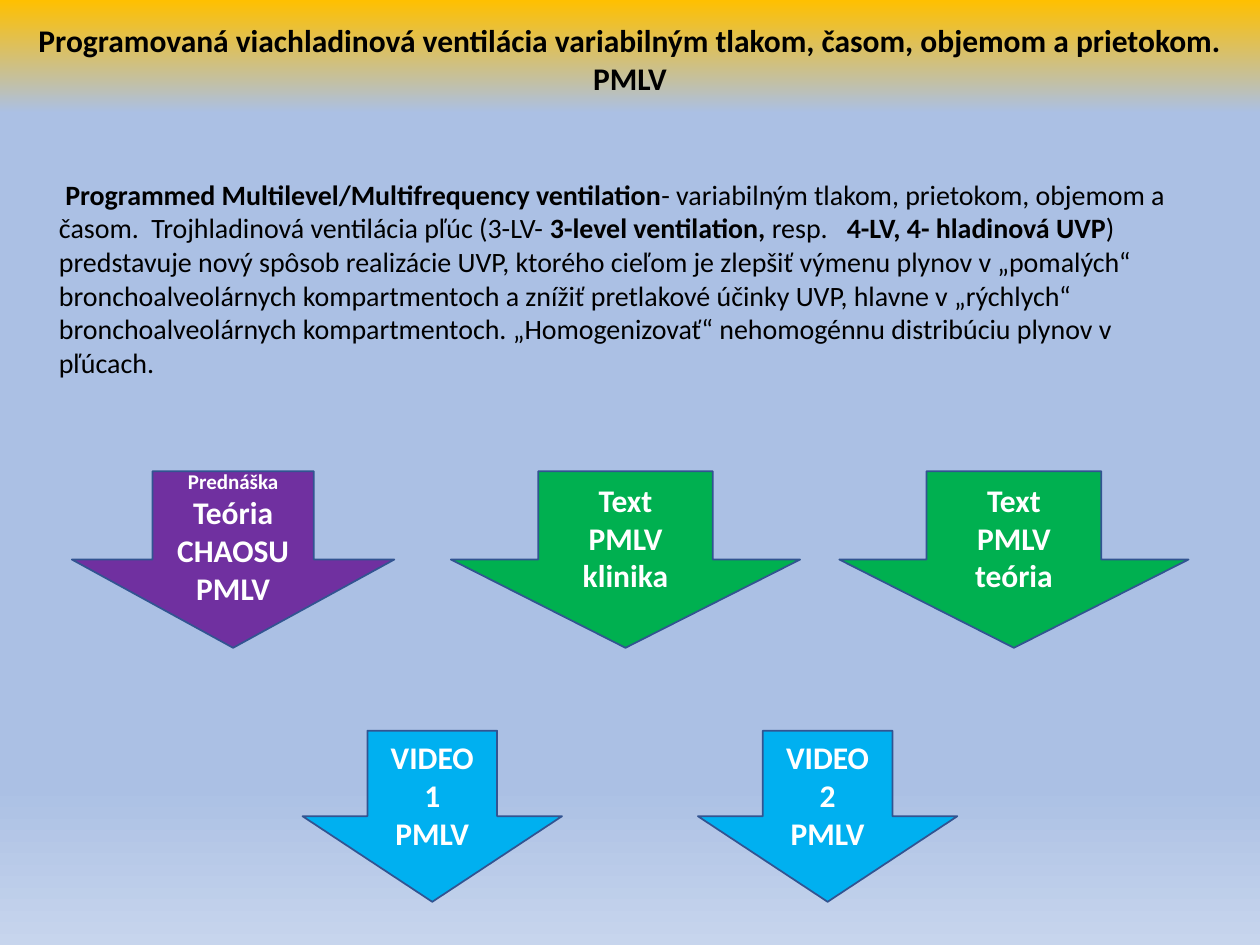
import copy
from dataclasses import dataclass

import pptx
import pptx.dml.color
import pptx.enum.shapes
import pptx.enum.text
import pptx.oxml.ns
import pptx.util
from pptx.util import Cm

COLORS = {
    "gold": "FFC000",
    "sky": "ABC0E4",
    "pale": "C7D5ED",
    "black": "000000",
    "white": "FFFFFF",
    "outline": "325491",
    "purple": "7030A0",
    "green": "00B050",
    "blue": "00B0F0",
}
BACKGROUND_STOPS = [(0, "gold"), (0.12, "sky"), (0.83, "sky"), (1, "pale")]
FONT = "Calibri"


@dataclass
class ArrowRow:
    top: float
    height: float


@dataclass
class Arrow:
    row: ArrowRow
    left: float
    width: float
    color: str
    lines: list[str]
    first_size: int = 18


LECTURES = ArrowRow(9.5, 3.56)
VIDEOS = ArrowRow(14.73, 3.45)
ARROWS = [
    Arrow(LECTURES, 1.45, 6.5, "purple", ["Prednáška", "Teória", "CHAOSU", "PMLV"], 12),
    Arrow(LECTURES, 9.09, 7.04, "green", ["Text", "PMLV klinika"]),
    Arrow(LECTURES, 16.92, 7.04, "green", ["Text", "PMLV teória"]),
    Arrow(VIDEOS, 6.1, 5.23, "blue", ["VIDEO 1", "PMLV"]),
    Arrow(VIDEOS, 14.07, 5.23, "blue", ["VIDEO 2", "PMLV"]),
]
TITLE_LINES = [
    "Programovaná viachladinová ventilácia variabilným tlakom, časom, objemom a prietokom.",
    "PMLV",
]
BODY_RUNS = [
    (" ", False),
    ("Programmed Multilevel/Multifrequency ventilation", True),
    ("- variabilným tlakom, prietokom, objemom a časom.  Trojhladinová ventilácia pľúc (3-LV- ", False),
    ("3-level ventilation, ", True),
    ("resp.   ", False),
    ("4-LV, 4- hladinová UVP", True),
    (") predstavuje nový spôsob realizácie UVP, ktorého cieľom je zlepšiť výmenu plynov "
     "v „pomalých“ bronchoalveolárnych kompartmentoch a znížiť pretlakové účinky UVP, "
     "hlavne v „rýchlych“ bronchoalveolárnych kompartmentoch. „Homogenizovať“ nehomogénnu "
     "distribúciu plynov v pľúcach.", False),
]


def rgb(name: str) -> pptx.dml.color.RGBColor:
    return pptx.dml.color.RGBColor.from_string(COLORS[name])


def format_font(font, size: int, color: str) -> None:
    font.name = FONT
    font.size = pptx.util.Pt(size)
    font.color.rgb = rgb(color)


def write_centered(text_frame, lines: list[str], color: str, first_size: int = 18) -> None:
    text_frame.text = "\n".join(lines)
    text_frame.vertical_anchor = pptx.enum.text.MSO_ANCHOR.MIDDLE
    for index, paragraph in enumerate(text_frame.paragraphs):
        paragraph.alignment = pptx.enum.text.PP_ALIGN.CENTER
        paragraph.space_before = pptx.util.Pt(0)
        format_font(paragraph.font, 18 if index else first_size, color)
        paragraph.font.bold = True


def paint_background(slide) -> None:
    fill = slide.background.fill
    fill.gradient()
    fill.gradient_angle = 270
    stop_list = slide.element.find(".//" + pptx.oxml.ns.qn("a:gsLst"))
    while len(stop_list) < len(BACKGROUND_STOPS):
        stop_list.append(copy.deepcopy(stop_list[0]))
    for stop, (position, color) in zip(fill.gradient_stops, BACKGROUND_STOPS):
        stop.position = position
        stop.color.rgb = rgb(color)


def add_title(slide) -> None:
    title = slide.shapes.title
    title.left, title.top, title.width, title.height = Cm(0.43), Cm(0.28), Cm(24.54), Cm(1.8)
    write_centered(title.text_frame, TITLE_LINES, "black")
    title.text_frame.word_wrap = False
    title.text_frame.auto_size = pptx.enum.text.MSO_AUTO_SIZE.NONE


def add_body(slide) -> None:
    box = slide.shapes.add_textbox(Cm(0.94), Cm(3.45), Cm(23.29), Cm(4.37))
    box.text_frame.word_wrap = True
    paragraph = box.text_frame.paragraphs[0]
    format_font(paragraph.font, 16, "black")
    for text, bold in BODY_RUNS:
        run = paragraph.add_run()
        run.text = text
        run.font.bold = bold


def add_arrow(slide, arrow: Arrow) -> None:
    shape = slide.shapes.add_shape(
        pptx.enum.shapes.MSO_SHAPE.DOWN_ARROW,
        Cm(arrow.left), Cm(arrow.row.top), Cm(arrow.width), Cm(arrow.row.height),
    )
    shape.shadow.inherit = False
    shape.fill.solid()
    shape.fill.fore_color.rgb = rgb(arrow.color)
    shape.line.color.rgb = rgb("outline")
    shape.line.width = pptx.util.Pt(1)
    write_centered(shape.text_frame, arrow.lines, "white", arrow.first_size)


def main() -> None:
    presentation = pptx.Presentation()
    presentation.slide_width, presentation.slide_height = Cm(25.4), Cm(19.05)
    slide = presentation.slides.add_slide(presentation.slide_layouts[5])
    paint_background(slide)
    add_title(slide)
    add_body(slide)
    for arrow in ARROWS:
        add_arrow(slide, arrow)
    presentation.save("out.pptx")


if __name__ == "__main__":
    main()
